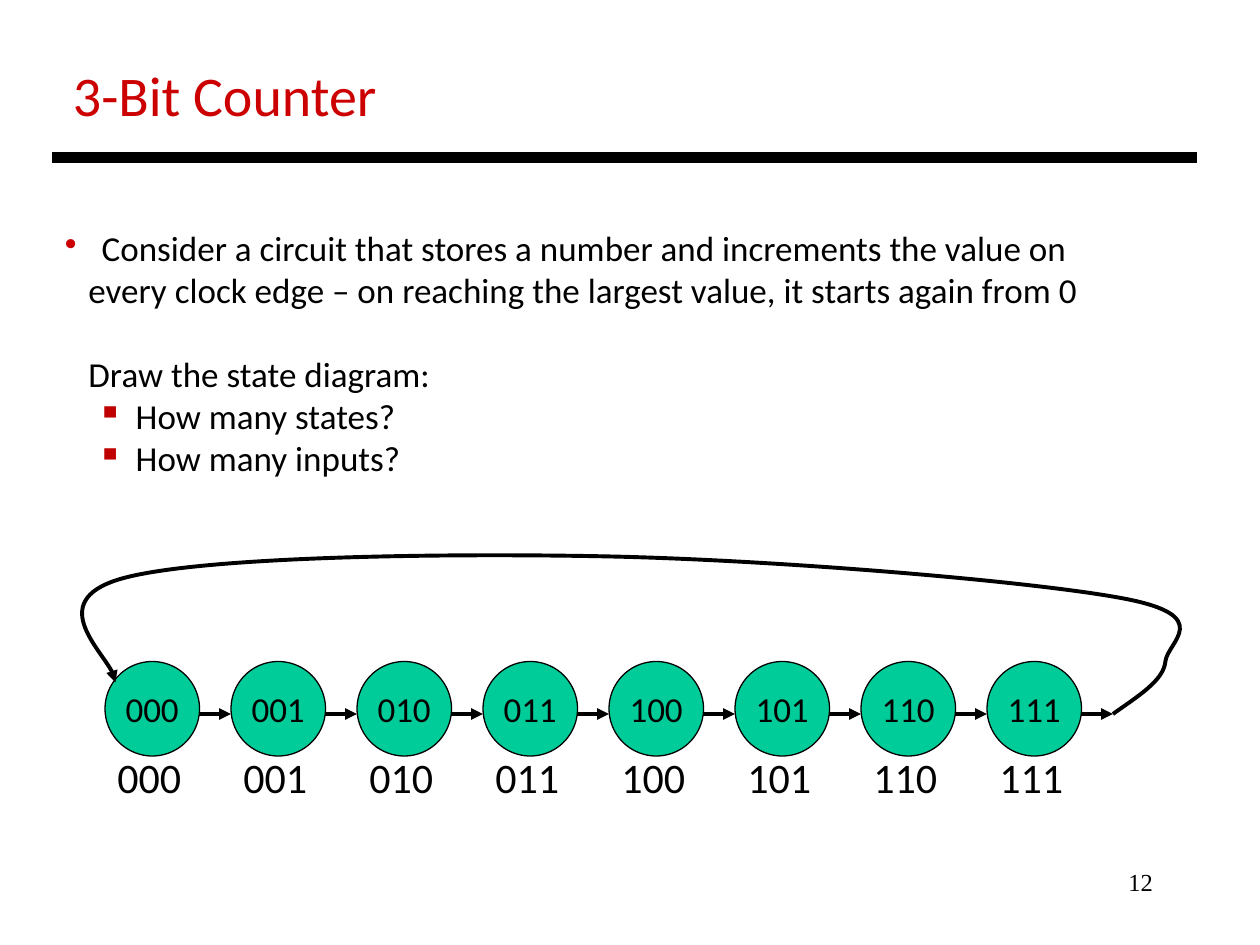
from dataclasses import dataclass
from lxml.etree import SubElement
from pptx import Presentation
from pptx.dml.color import RGBColor
from pptx.enum.shapes import MSO_CONNECTOR, MSO_SHAPE
from pptx.enum.text import MSO_ANCHOR, MSO_AUTO_SIZE, PP_ALIGN
from pptx.oxml.ns import qn
from pptx.util import Pt


@dataclass(frozen=True)
class Theme:
    font: str = "Calibri"
    number_font: str = "Times New Roman"
    ink: str = "000000"
    title_color: str = "CC0000"
    sub_bullet: str = "C00000"
    state_fill: str = "00CC99"
    title_size: float = 32
    body_size: float = 20
    label_size: float = 24
    number_size: float = 14
    rule_width: float = 6
    arrow_width: float = 2.25
    outline_width: float = 0.75


THEME = Theme()
TITLE = "3-Bit Counter"
PAGE_NUMBER = "12"
BODY = [
    {"text": "Consider a circuit that stores a number and increments the value on",
     "left": 21, "hang": 21, "bullet": "•", "color": THEME.title_color},
    {"text": "every clock edge – on reaching the largest value, it starts again from 0",
     "left": 13.5},
    {"text": "Draw the state diagram:", "left": 13.5, "before": 24},
    {"text": "How many states?", "left": 40.5, "hang": 22, "bullet": "▪",
     "color": THEME.sub_bullet, "level": 1},
    {"text": "How many inputs?", "left": 40.5, "hang": 22, "bullet": "▪",
     "color": THEME.sub_bullet, "level": 1},
]
STATES = [f"{value:03b}" for value in range(8)]
FIRST_LEFT, PITCH, DIAMETER = 60, 72, 54
STATE_TOP, LABEL_TOP, ARROW_Y = 378, 426, 408
RETURN_START = (636, ARROW_Y)
RETURN_CURVES = [
    [(650, 398), (665, 389), (666, 378)],
    [(667, 367), (695, 352), (642, 342)],
    [(589, 332), (443, 320), (348, 318)],
    [(253, 316), (119, 318), (72, 330)],
    [(25, 342), (67, 380), (66, 390)],
]


def box(left, top, width, height):
    return Pt(left), Pt(top), Pt(width), Pt(height)


def write(paragraph, text, size, color=THEME.ink, font=THEME.font, align=PP_ALIGN.LEFT):
    paragraph.alignment = align
    run = paragraph.add_run()
    run.text = text
    for name, value in {"name": font, "size": Pt(size), "bold": False}.items():
        setattr(run.font, name, value)
    run.font.color.rgb = RGBColor.from_string(color)


def set_frame(frame, wrap, anchor=MSO_ANCHOR.TOP):
    settings = {"auto_size": MSO_AUTO_SIZE.NONE, "word_wrap": wrap, "vertical_anchor": anchor}
    for name, value in settings.items():
        setattr(frame, name, value)
    return frame


def set_line(line, width, arrow=False):
    line.color.rgb = RGBColor.from_string(THEME.ink)
    line.width = Pt(width)
    if arrow:
        SubElement(line._get_or_add_ln(), qn("a:tailEnd"), type="triangle")


def add_line(shapes, start, end, width, arrow=False):
    connector = shapes.add_connector(MSO_CONNECTOR.STRAIGHT, *map(Pt, start + end))
    set_line(connector.line, width, arrow)
    SubElement(connector._element.spPr, qn("a:effectLst"))


def add_title(shapes):
    title = shapes.title
    title.left, title.top, title.width, title.height = box(34.5, 31, 190, 46)
    write(set_frame(title.text_frame, False).paragraphs[0], TITLE,
          THEME.title_size, THEME.title_color)


def add_body(shapes):
    frame = set_frame(shapes.add_textbox(*box(30, 126, 604, 153)).text_frame, True)
    for index, item in enumerate(BODY):
        paragraph = frame.add_paragraph() if index else frame.paragraphs[0]
        paragraph.level = item.get("level", 0)
        paragraph.space_before = Pt(item.get("before", 0))
        write(paragraph, item["text"], THEME.body_size)
        properties = paragraph._p.get_or_add_pPr()
        properties.set("marL", str(Pt(item["left"])))
        properties.set("indent", str(-Pt(item.get("hang", 0))))
        if "bullet" in item:
            bullet_color = SubElement(properties, qn("a:buClr"))
            SubElement(bullet_color, qn("a:srgbClr"), val=item["color"])
            SubElement(properties, qn("a:buChar"), char=item["bullet"])


def add_state(shapes, code, left):
    circle = shapes.add_shape(MSO_SHAPE.OVAL, *box(left, STATE_TOP, DIAMETER, DIAMETER))
    circle.shadow.inherit = False
    circle.fill.solid()
    circle.fill.fore_color.rgb = RGBColor.from_string(THEME.state_fill)
    set_line(circle.line, THEME.outline_width)
    write(set_frame(circle.text_frame, False, MSO_ANCHOR.MIDDLE).paragraphs[0],
          code, THEME.body_size, align=PP_ALIGN.CENTER)
    label = shapes.add_textbox(*box(left, LABEL_TOP, 51, 36))
    write(set_frame(label.text_frame, False).paragraphs[0], code, THEME.label_size)
    add_line(shapes, (left + DIAMETER, ARROW_Y), (left + PITCH, ARROW_Y),
             THEME.arrow_width, arrow=True)


def add_return_arrow(shapes):
    builder = shapes.build_freeform(*map(Pt, RETURN_START))
    points = [tuple(map(Pt, point)) for curve in RETURN_CURVES for point in curve]
    builder.add_line_segments(points, close=False)
    arrow = builder.convert_to_shape()
    segments = list(arrow._element.iter(qn("a:lnTo")))
    outline = segments[0].getparent()
    for first in range(0, len(segments), 3):
        bezier = SubElement(outline, qn("a:cubicBezTo"))
        for segment in segments[first:first + 3]:
            bezier.append(segment[0])
            outline.remove(segment)
    arrow.shadow.inherit = False
    arrow.fill.background()
    set_line(arrow.line, THEME.arrow_width, arrow=True)


def main():
    presentation = Presentation()
    presentation.slide_width, presentation.slide_height = Pt(720), Pt(540)
    shapes = presentation.slides.add_slide(presentation.slide_layouts[5]).shapes
    add_title(shapes)
    add_line(shapes, (30, 90), (684, 90), THEME.rule_width)
    add_body(shapes)
    for index, code in enumerate(STATES):
        add_state(shapes, code, FIRST_LEFT + index * PITCH)
    add_return_arrow(shapes)
    number = shapes.add_textbox(*box(516, 492, 150, 36))
    write(set_frame(number.text_frame, True).paragraphs[0], PAGE_NUMBER,
          THEME.number_size, font=THEME.number_font, align=PP_ALIGN.RIGHT)
    presentation.save("out.pptx")


if __name__ == "__main__":
    main()
